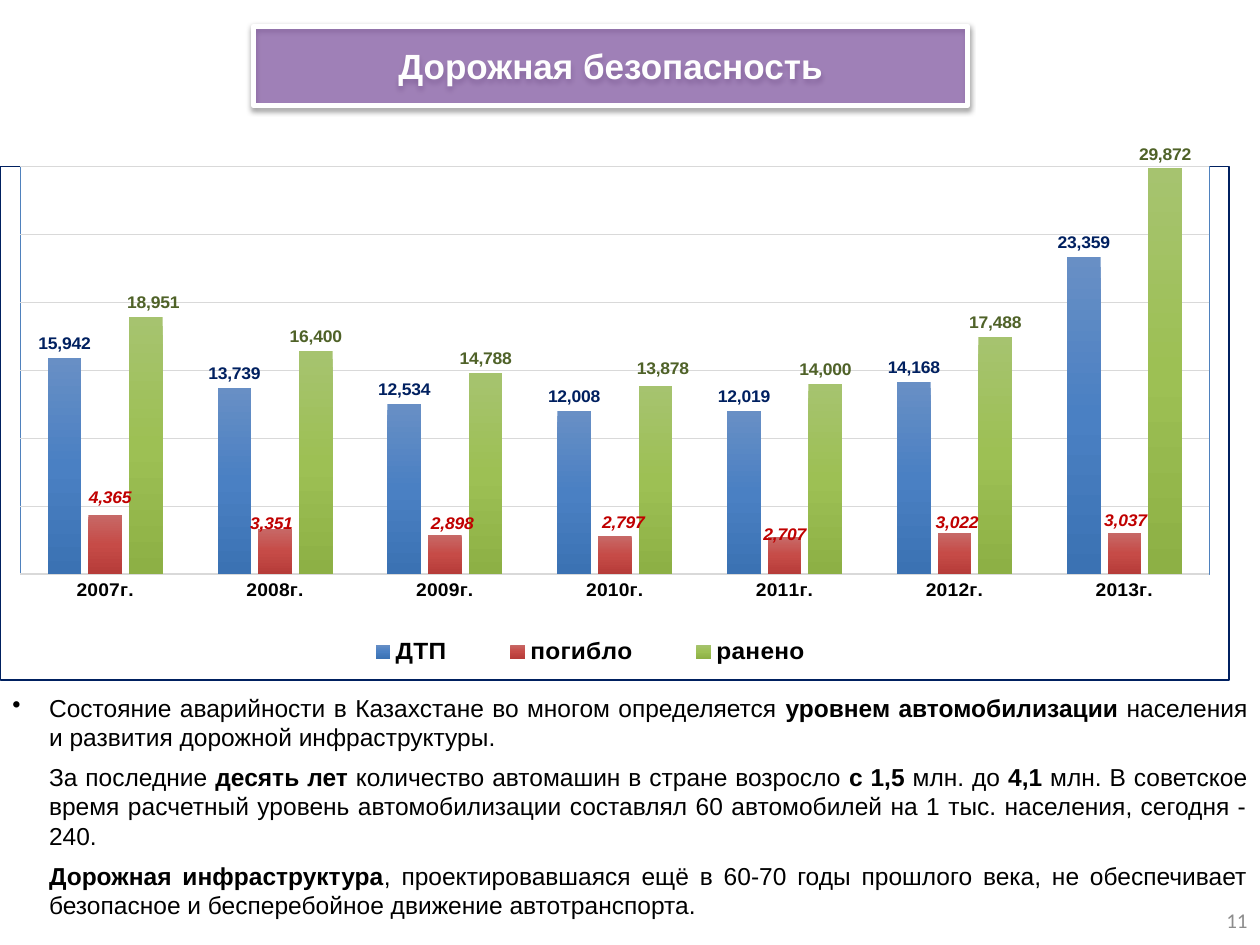
import dataclasses
import typing

import pptx
import pptx.chart.data
import pptx.chart.series
import pptx.dml.color
import pptx.enum.chart
import pptx.enum.shapes
import pptx.enum.text
import pptx.oxml
import pptx.oxml.ns
import pptx.util

Cm, Pt = pptx.util.Cm, pptx.util.Pt
qn = pptx.oxml.ns.qn
NAMESPACES = pptx.oxml.ns.nsdecls("a", "c")


@dataclasses.dataclass(frozen=True)
class Theme:
    font: str = "Arial"
    number_font: str = "Calibri"
    text: str = "000000"
    banner: str = "7030A0"
    banner_text: str = "FEFEFE"
    white: str = "FFFFFF"
    grid: str = "D9D9D9"
    frame: str = "002060"
    plot_edge: str = "4F81BD"
    page: str = "8C8C8C"
    title_size: int = 20
    body_size: int = 14
    legend_size: int = 14
    axis_size: int = 11
    label_size: int = 10
    page_size: int = 12


class Box(typing.NamedTuple):
    left: float
    top: float
    width: float
    height: float

    def lengths(self) -> list:
        return [Cm(value) for value in self]


@dataclasses.dataclass(frozen=True)
class Measure:
    name: str
    values: tuple
    gradient: tuple
    label_color: str
    italic: bool = False
    # Label shifts by year index, in percent of the chart size
    shifts: dict = dataclasses.field(default_factory=dict)


THEME = Theme()
YEARS = [f"{year}г." for year in range(2007, 2014)]
MEASURES = [
    Measure("ДТП", (15942, 13739, 12534, 12008, 12019, 14168, 23359),
            ("688FC5", "4A80C3", "3B72B3"), "002060"),
    Measure("погибло", (4365, 3351, 2898, 2797, 2707, 3022, 3037),
            ("C76967", "C64B47", "B63C39"), "C00000", True,
            dict(enumerate([(0.4, -0.6), (-0.3, 1.9), (0.6, 0.6), (0.7, 0.2),
                            (0, 2.2), (0.2, 0.7), (0.1, 0.4)]))),
    Measure("ранено", (18951, 16400, 14788, 13878, 14000, 17488, 29872),
            ("A6C36F", "9DC054", "8DB045"), "4F6228",
            shifts={0: (0.6, 0), 3: (0.6, -0.6)}),
]
# Words between asterisks are bold
PARAGRAPHS = [
    "Состояние аварийности в Казахстане во многом определяется *уровнем автомобилизации* "
    "населения и развития дорожной инфраструктуры.",
    "За последние *десять лет* количество автомашин в стране возросло *с 1,5* млн. до *4,1* млн. "
    "В советское время расчетный уровень автомобилизации составлял 60 автомобилей "
    "на 1 тыс. населения, сегодня - 240.",
    "*Дорожная инфраструктура*, проектировавшаяся ещё в 60-70 годы прошлого века, "
    "не обеспечивает безопасное и бесперебойное движение автотранспорта.",
]


def rgb(color: str) -> pptx.dml.color.RGBColor:
    return pptx.dml.color.RGBColor.from_string(color)


def set_font(font, size: int, color: str, bold: bool = False, name: str = THEME.font) -> None:
    font.name, font.size, font.bold = name, Pt(size), bold
    font.color.rgb = rgb(color)


def outline(color: str):
    return pptx.oxml.parse_xml(
        f'<c:spPr {NAMESPACES}><a:noFill/><a:ln w="9525"><a:solidFill>'
        f'<a:srgbClr val="{color}"/></a:solidFill></a:ln></c:spPr>')


def layout(mode: str = "", **fractions: float):
    modes = "".join(f'<c:{axis}Mode val="edge"/>' for axis in "xy") if mode else ""
    target = '<c:layoutTarget val="inner"/>' if mode == "inner" else ""
    sizes = "".join(f'<c:{key} val="{value}"/>' for key, value in fractions.items())
    return pptx.oxml.parse_xml(
        f"<c:layout {NAMESPACES}><c:manualLayout>{target}{modes}{sizes}"
        "</c:manualLayout></c:layout>")


def draw_banner(title, box: Box) -> None:
    title.left, title.top, title.width, title.height = box.lengths()
    title.fill.solid()
    title.fill.fore_color.rgb = rgb(THEME.banner)
    title.line.color.rgb = rgb(THEME.white)
    title.line.width = Pt(3)
    properties = title._element.spPr
    properties.find(qn("a:xfrm")).addnext(pptx.oxml.parse_xml(
        f'<a:prstGeom {NAMESPACES} prst="roundRect"><a:avLst/></a:prstGeom>'))
    properties.find(qn("a:solidFill"))[0].append(
        pptx.oxml.parse_xml(f'<a:alpha {NAMESPACES} val="49000"/>'))
    properties.append(pptx.oxml.parse_xml(
        f'<a:effectLst {NAMESPACES}><a:outerShdw blurRad="{Pt(3.1)}" dist="{Pt(1.6)}" '
        'dir="5400000"><a:srgbClr val="000000"><a:alpha val="38000"/></a:srgbClr>'
        "</a:outerShdw></a:effectLst>"))
    frame = title.text_frame
    frame.text = "Дорожная безопасность"
    frame.word_wrap = False
    frame.vertical_anchor = pptx.enum.text.MSO_ANCHOR.MIDDLE
    frame.paragraphs[0].alignment = pptx.enum.text.PP_ALIGN.CENTER
    set_font(frame.paragraphs[0].font, THEME.title_size, THEME.banner_text, True)


def format_series(series: pptx.chart.series.BarSeries, measure: Measure) -> None:
    series.format.fill.background()
    properties = series._element.find(qn("c:spPr"))
    stops = "".join(f'<a:gs pos="{index * 50000}"><a:srgbClr val="{color}"/></a:gs>'
                    for index, color in enumerate(measure.gradient))
    properties.replace(properties[0], pptx.oxml.parse_xml(
        f"<a:gradFill {NAMESPACES}><a:gsLst>{stops}</a:gsLst>"
        '<a:lin ang="5400000" scaled="0"/></a:gradFill>'))

    labels = series.data_labels
    labels.show_value = True
    labels.number_format, labels.number_format_is_linked = "#,##0", False
    moved = [series.points[index].data_label for index in measure.shifts]
    for label in [labels, *moved]:
        label.position = pptx.enum.chart.XL_LABEL_POSITION.OUTSIDE_END
        set_font(label.font, THEME.label_size, measure.label_color, True)
        label.font.italic = measure.italic
    for index, (right, down) in measure.shifts.items():
        year = series._element.xpath(f'c:dLbls/c:dLbl/c:idx[@val="{index}"]')[0]
        year.addnext(layout(x=right / 100, y=down / 100))


def draw_accidents(slide, box: Box) -> None:
    figures = pptx.chart.data.CategoryChartData(number_format="#,##0")
    figures.categories = YEARS
    for measure in MEASURES:
        figures.add_series(measure.name, measure.values)
    chart = slide.shapes.add_chart(
        pptx.enum.chart.XL_CHART_TYPE.COLUMN_CLUSTERED, *box.lengths(), figures).chart
    chart.has_title = False
    set_font(chart.font, THEME.label_size, THEME.text)

    columns = chart.plots[0]
    columns.gap_width, columns.overlap = 163, -21
    columns.vary_by_categories = False
    for series, measure in zip(columns.series, MEASURES):
        format_series(series, measure)

    # Axes and gridlines
    years, counts = chart.category_axis, chart.value_axis
    years.major_tick_mark = pptx.enum.chart.XL_TICK_MARK.NONE
    set_font(years.tick_labels.font, THEME.axis_size, THEME.text, True)
    counts.minimum_scale, counts.maximum_scale = 0, 30000
    counts.major_unit = 5000
    counts.visible = False
    for line, width in ((years.format.line, 1), (counts.major_gridlines.format.line, 0.75)):
        line.color.rgb, line.width = rgb(THEME.grid), Pt(width)

    # Legend
    chart.has_legend = True
    chart.legend.position = pptx.enum.chart.XL_LEGEND_POSITION.BOTTOM
    chart.legend.include_in_layout = False
    set_font(chart.legend.font, THEME.legend_size, THEME.text, True)
    legend = chart.legend._element
    for old in legend.findall(qn("c:layout")):
        legend.remove(old)
    legend.find(qn("c:legendPos")).addnext(layout("edge", x=0.26, y=0.9, w=0.44, h=0.09))

    # Plot position and frames
    plot_area = chart._chartSpace.chart.plotArea
    for old in plot_area.findall(qn("c:layout")):
        plot_area.remove(old)
    plot_area.insert(0, layout("inner", x=0.016, y=0, w=0.968, h=0.794))
    plot_area.append(outline(THEME.plot_edge))
    chart._chartSpace.chart.addnext(outline(THEME.frame))


def draw_commentary(slide, box: Box) -> None:
    frame = slide.shapes.add_textbox(*box.lengths()).text_frame
    frame.word_wrap = True
    frame.auto_size = pptx.enum.text.MSO_AUTO_SIZE.SHAPE_TO_FIT_TEXT
    for index, text in enumerate(PARAGRAPHS):
        paragraph = frame.add_paragraph() if index else frame.paragraphs[0]
        paragraph.alignment = pptx.enum.text.PP_ALIGN.JUSTIFY
        paragraph.space_after = Pt(6)
        set_font(paragraph.font, THEME.body_size, THEME.text, None)
        for part, words in enumerate(text.split("*")):
            if words:
                run = paragraph.add_run()
                run.text, run.font.bold = words, part % 2 == 1
        properties = paragraph._p.get_or_add_pPr()
        properties.set("marL", str(Cm(0.74)))
        properties.set("indent", str(0 if index else -Cm(0.74)))
        if index == 0:
            bullet = pptx.oxml.parse_xml(f'<a:buChar {NAMESPACES} char="•"/>')
            properties.find(qn("a:spcAft")).addnext(bullet)


def draw_page_number(slide, box: Box) -> None:
    frame = slide.shapes.add_textbox(*box.lengths()).text_frame
    frame.word_wrap = True
    frame.vertical_anchor = pptx.enum.text.MSO_ANCHOR.MIDDLE
    frame.text = "11"
    frame.paragraphs[0].alignment = pptx.enum.text.PP_ALIGN.RIGHT
    set_font(frame.paragraphs[0].font, THEME.page_size, THEME.page, name=THEME.number_font)


def main() -> None:
    deck = pptx.Presentation()
    deck.slide_width, deck.slide_height = Cm(25.4), Cm(19.05)
    slide = deck.slides.add_slide(deck.slide_layouts.get_by_name("Title Only"))
    draw_page_number(slide, Box(19.69, 18.03, 5.71, 1.02))
    draw_commentary(slide, Box(0, 13.84, 25.4, 4.88))
    draw_accidents(slide, Box(0, 2.92, 24.79, 10.8))
    draw_banner(slide.shapes.title, Box(5.11, 0.53, 14.4, 1.6))
    deck.save("out.pptx")


if __name__ == "__main__":
    main()
